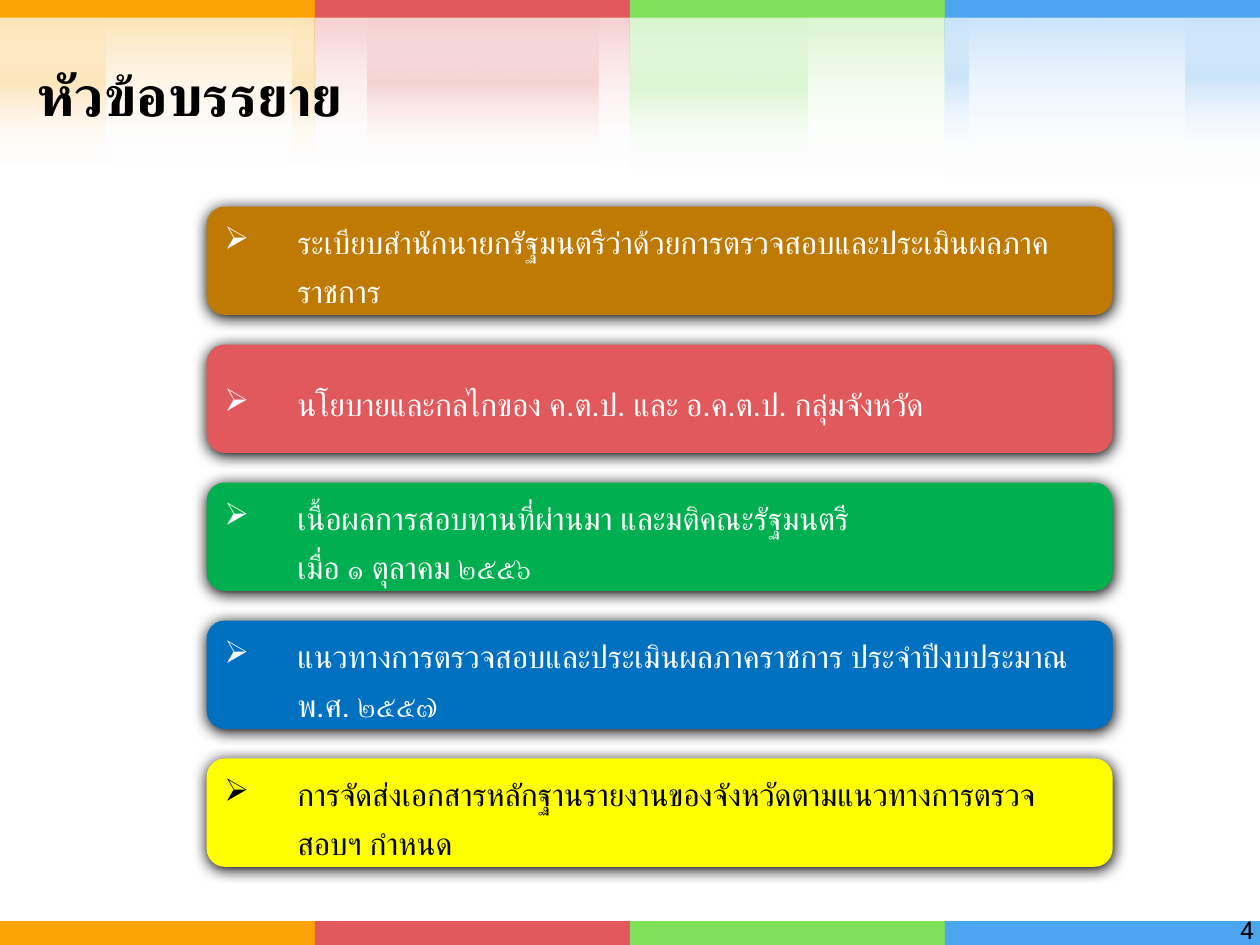
import pptx
import pptx.util
import pptx.oxml
import pptx.oxml.ns
import pptx.dml.color
import pptx.enum.shapes
import pptx.enum.text
import lxml.etree

RGBColor = pptx.dml.color.RGBColor
ORANGE = RGBColor(0xFC, 0xA3, 0x04)
RED = RGBColor(0xE1, 0x59, 0x5C)
LIME = RGBColor(0x80, 0xE0, 0x5A)
SKY = RGBColor(0x4B, 0xA5, 0xEF)
BROWN = RGBColor(0xBE, 0x7A, 0x02)
GREEN = RGBColor(0x00, 0xB0, 0x50)
BLUE = RGBColor(0x00, 0x70, 0xC0)
YELLOW = RGBColor(0xFF, 0xFF, 0x00)
WHITE = RGBColor(0xFF, 0xFF, 0xFF)
BLACK = RGBColor(0x00, 0x00, 0x00)

FONT = "Roboto"
SHAPES = pptx.enum.shapes.MSO_SHAPE
ALIGN = pptx.enum.text.PP_ALIGN
ANCHOR = pptx.enum.text.MSO_ANCHOR
qn = pptx.oxml.ns.qn
Inches = pptx.util.Inches
NAMESPACE = pptx.oxml.ns.nsdecls("a")

deck = pptx.Presentation()
deck.slide_width = Inches(10)
deck.slide_height = Inches(7.5)
page = deck.slides.add_slide(deck.slide_layouts[6])
COLUMN = 10 / 4


def add_block(kind, left, top, width, height, stops):
    block = page.shapes.add_shape(
        kind, Inches(left), Inches(top), Inches(width), Inches(height))
    block.shadow.inherit = False
    block.line.fill.background()
    if len(stops) == 1:
        block.fill.solid()
        block.fill.fore_color.rgb = stops[0]
        return block
    marks = "".join(
        f'<a:gs pos="{place * 1000}"><a:srgbClr val="{color}">'
        f'<a:alpha val="{alpha * 1000}"/></a:srgbClr></a:gs>'
        for place, color, alpha in stops)
    block.element.spPr.insert(2, pptx.oxml.parse_xml(
        f'<a:gradFill {NAMESPACE} rotWithShape="1"><a:gsLst>{marks}</a:gsLst>'
        '<a:lin ang="5400000" scaled="0"/></a:gradFill>'))
    return block


def add_text(para, text, **looks):
    span = para.add_run()
    span.text = text
    for name, value in {"name": FONT, **looks}.items():
        if name == "color":
            span.font.color.rgb = value
        else:
            setattr(span.font, name, value)
    lxml.etree.SubElement(span.font._element, qn("a:cs"), typeface=FONT)


washes = [
    (RED, 1.31, 1.31, [(0.42, 1.83)], 1),
    (LIME, 1.37, 1.37, [(0, 1.41)], 1),
    (SKY, 1.43, 1.22, [(0, 0.19), (1.91, 0.59)], 1),
    (ORANGE, 1.31, 1.31, [(2.32, 0.18), (0, 0.84)], 1),
]
bands = [ORANGE, RED, LIME, SKY]
for color, height, glow_height, glows, layers in washes:
    left = bands.index(color) * COLUMN
    fade = [(0, color, 20), (100, WHITE, 0)]
    glow = [(0, WHITE, 0), (50, color, 20), (100, WHITE, 0)]
    panes = [(0, COLUMN, height, fade)]
    panes += [(offset, width, glow_height, glow) for offset, width in glows]
    panes += panes[:1]
    for offset, width, tall, stops in panes:
        add_block(SHAPES.RECTANGLE, left + offset, 0, width, tall, stops)

for top, height in [(0, 0.14), (7.31, 0.19)]:
    for index, color in enumerate(bands):
        add_block(SHAPES.RECTANGLE, index * COLUMN, top, COLUMN, height, [color])

captions = [
    ("4", (8.83, 7.21, 1.22, 0.29), ALIGN.RIGHT, ANCHOR.TOP, 14, None),
    ("หัวข้อบรรยาย", (0.2, 0.23, 9.45, 1.03), ALIGN.LEFT, ANCHOR.MIDDLE, 32, True),
]
for text, place, align, anchor, size, bold in captions:
    box = page.shapes.add_textbox(*map(Inches, place))
    box.text_frame.word_wrap = True
    box.text_frame.vertical_anchor = anchor
    para = box.text_frame.paragraphs[0]
    para.alignment = align
    add_text(para, text, size=pptx.util.Pt(size), bold=bold, color=BLACK)

topics = [
    (BROWN, WHITE, ["ระเบียบสำนักนายกรัฐมนตรีว่าด้วยการตรวจสอบและประเมินผลภาคราชการ"]),
    (RED, WHITE, ["นโยบายและกลไกของ ค.ต.ป. และ อ.ค.ต.ป. กลุ่มจังหวัด"]),
    (GREEN, WHITE, ["เนื้อผลการสอบทานที่ผ่านมา และมติคณะรัฐมนตรี",
                    "เมื่อ ๑ ตุลาคม ๒๕๕๖"]),
    (BLUE, WHITE, ["แนวทางการตรวจสอบและประเมินผลภาคราชการ ประจำปีงบประมาณ พ.ศ. ๒๕๕๗"]),
    (YELLOW, BLACK, ["การจัดส่งเอกสารหลักฐานรายงานของจังหวัดตามแนวทางการตรวจสอบฯ กำหนด"]),
]
TOPIC_TOP, TOPIC_PITCH = 1.64, 1.095
INDENT = Inches(0.58)
for row, (color, ink, lines) in enumerate(topics):
    box = add_block(SHAPES.ROUNDED_RECTANGLE, 1.64, TOPIC_TOP + row * TOPIC_PITCH,
                    7.19, 0.86, [color])
    box.element.spPr.find(qn("a:effectLst")).append(pptx.oxml.parse_xml(
        f'<a:outerShdw {NAMESPACE} blurRad="{pptx.util.Pt(8.5)}" '
        f'dist="{pptx.util.Pt(1)}" dir="5400000" algn="ctr" rotWithShape="0">'
        f'<a:srgbClr val="{BLACK}"/></a:outerShdw>'))
    frame = box.text_frame
    frame.word_wrap = True
    frame.vertical_anchor = ANCHOR.MIDDLE
    for number, line in enumerate(lines):
        para = frame.add_paragraph() if number else frame.paragraphs[0]
        para.alignment = ALIGN.LEFT
        layout = para._p.get_or_add_pPr()
        layout.set("marL", str(INDENT))
        layout.set("indent", str(0 if number else -INDENT))
        if number == 0:
            lxml.etree.SubElement(layout, qn("a:buChar"), char="➢")
        tabs = lxml.etree.SubElement(layout, qn("a:tabLst"))
        lxml.etree.SubElement(tabs, qn("a:tab"), pos=str(INDENT), algn="l")
        para.line_spacing = 1.3
        add_text(para, line, size=pptx.util.Pt(18), color=ink)

deck.save("out.pptx")
